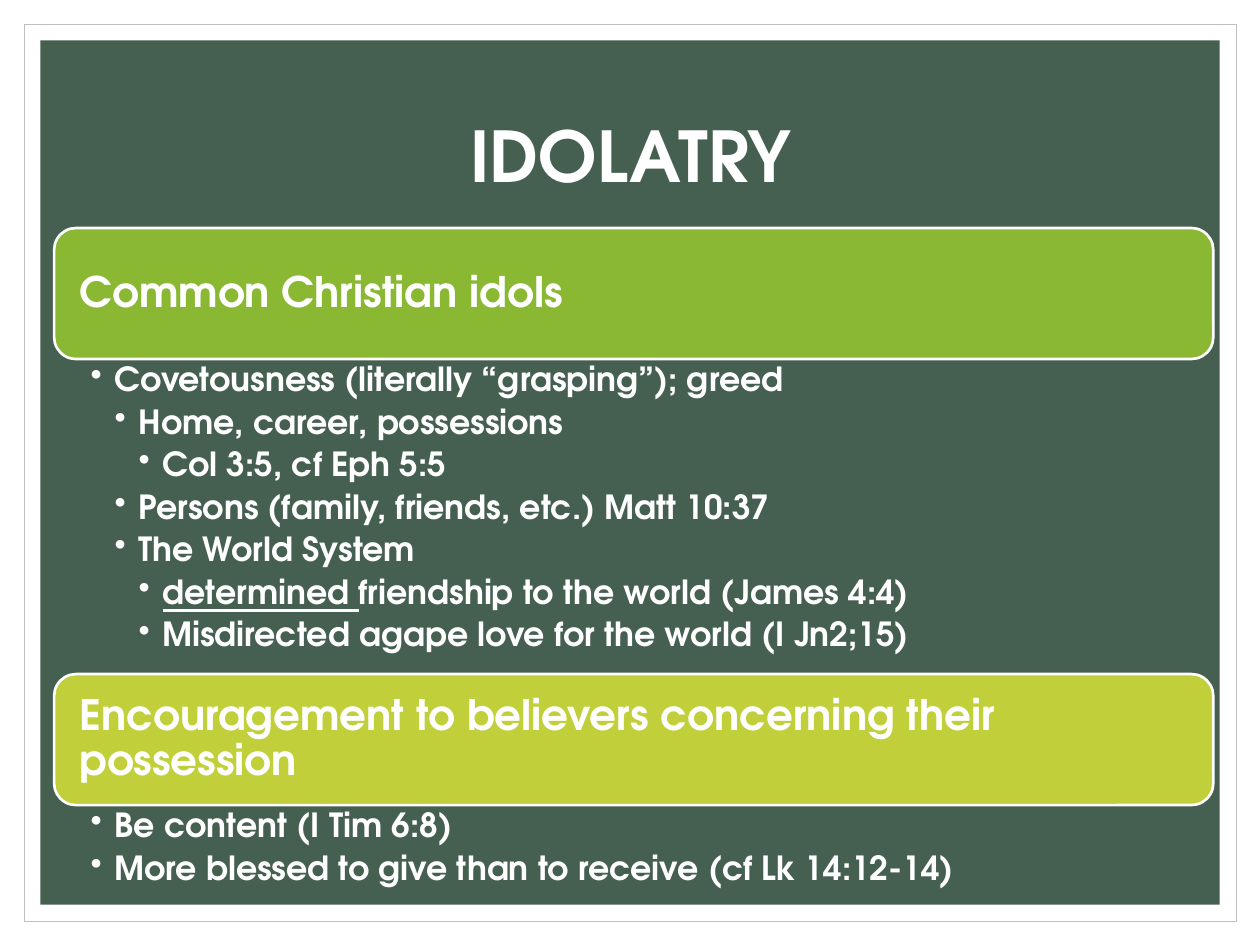
"""Build the IDOLATRY slide: two headed sections of bulleted points."""
import pptx
import pptx.dml.color
import pptx.enum.shapes
import pptx.enum.text
import pptx.oxml.ns
import pptx.util
from lxml import etree

Inches, Pt = pptx.util.Inches, pptx.util.Pt
SHAPE = pptx.enum.shapes.MSO_SHAPE
ANCHOR = pptx.enum.text.MSO_ANCHOR
ALIGN = pptx.enum.text.PP_ALIGN
COLORS = {"white": "FFFFFF", "frame": "BFBFBF", "panel": "455F51",
          "green": "8AB833", "lime": "C0CF3A"}
FONT = "TeX Gyre Adventor"
LEFT, WIDTH, HEADING_HEIGHT, INDENT = 0.43, 9.2, 1.04, 0.19

SECTIONS = [
    ("Common Christian idols", "green", 1.81, 2.5, [
        (1, "", "Covetousness (literally “grasping”); greed"),
        (2, "", "Home, career, possessions"),
        (3, "", "Col 3:5, cf Eph 5:5"),
        (2, "", "Persons (family, friends, etc.) Matt 10:37"),
        (2, "", "The World System"),
        (3, "determined ", "friendship to the world (James 4:4)"),
        (3, "", "Misdirected agape love for the world (I Jn2;15)"),
    ]),
    ("Encouragement to believers concerning their possession", "lime", 5.35, 0.72, [
        (1, "", "Be content (I Tim 6:8)"),
        (1, "", "More blessed to give than to receive (cf Lk 14:12-14)"),
    ]),
]


def add_block(kind, left, top, width, height, fill, line=None, line_width=0):
    block = slide.shapes.add_shape(kind, Inches(left), Inches(top), Inches(width), Inches(height))
    block.shadow.inherit = False
    block.fill.solid()
    block.fill.fore_color.rgb = pptx.dml.color.RGBColor.from_string(COLORS[fill])
    if line:
        block.line.color.rgb = pptx.dml.color.RGBColor.from_string(COLORS[line])
        block.line.width = Pt(line_width)
    else:
        block.line.fill.background()
    return block


def style_paragraph(paragraph, size, align, space_after=0):
    paragraph.font.name = FONT
    paragraph.font.size = Pt(size)
    paragraph.font.bold = True
    paragraph.font.color.rgb = pptx.dml.color.RGBColor.from_string(COLORS["white"])
    paragraph.alignment = align
    paragraph.line_spacing = 0.9
    paragraph.space_before = Pt(0)
    paragraph.space_after = Pt(space_after)


deck = pptx.Presentation()
deck.slide_width, deck.slide_height = Inches(10), Inches(7.5)
slide = deck.slides.add_slide(deck.slide_layouts[5])

add_block(SHAPE.RECTANGLE, 0.19, 0.19, 9.62, 7.12, "white", "frame", 0.5)
add_block(SHAPE.RECTANGLE, 0.32, 0.32, 9.36, 6.86, "panel")

title = slide.shapes.title
title.left, title.top, title.width, title.height = (
    Inches(0.88), Inches(0.34), Inches(8.25), Inches(1.86))
title.text_frame.text = "IDOLATRY"
title.text_frame.auto_size = pptx.enum.text.MSO_AUTO_SIZE.NONE
title.text_frame.vertical_anchor = ANCHOR.MIDDLE
style_paragraph(title.text_frame.paragraphs[0], 40, ALIGN.CENTER)
slide.shapes._spTree.append(title._element)

for heading, color, top, points_height, points in SECTIONS:
    banner = add_block(SHAPE.ROUNDED_RECTANGLE, LEFT, top, WIDTH, HEADING_HEIGHT,
                       color, "white", 1.5).text_frame
    banner.text = heading
    banner.word_wrap = True
    banner.vertical_anchor = ANCHOR.MIDDLE
    banner.margin_left = banner.margin_right = Inches(0.15)
    style_paragraph(banner.paragraphs[0], 24, ALIGN.LEFT)

    body = slide.shapes.add_textbox(Inches(LEFT), Inches(top + HEADING_HEIGHT),
                                    Inches(WIDTH), Inches(points_height)).text_frame
    body.word_wrap = True
    body.margin_left, body.margin_right = Inches(0.29), Inches(0.19)
    body.margin_top = body.margin_bottom = Inches(0.03)
    for index, (level, underlined, plain) in enumerate(points):
        point = body.add_paragraph() if index else body.paragraphs[0]
        point.level = level
        style_paragraph(point, 19, ALIGN.LEFT, 3.8)
        if underlined:
            emphasis = point.add_run()
            emphasis.text = underlined
            emphasis.font.underline = True
        point.add_run().text = plain
        properties = point._p.get_or_add_pPr()
        properties.set("marL", str(Inches(level * INDENT)))
        properties.set("indent", str(-Inches(INDENT)))
        bullet = etree.Element(pptx.oxml.ns.qn("a:buChar"), char="•")
        properties.find(pptx.oxml.ns.qn("a:defRPr")).addprevious(bullet)

deck.save("out.pptx")
